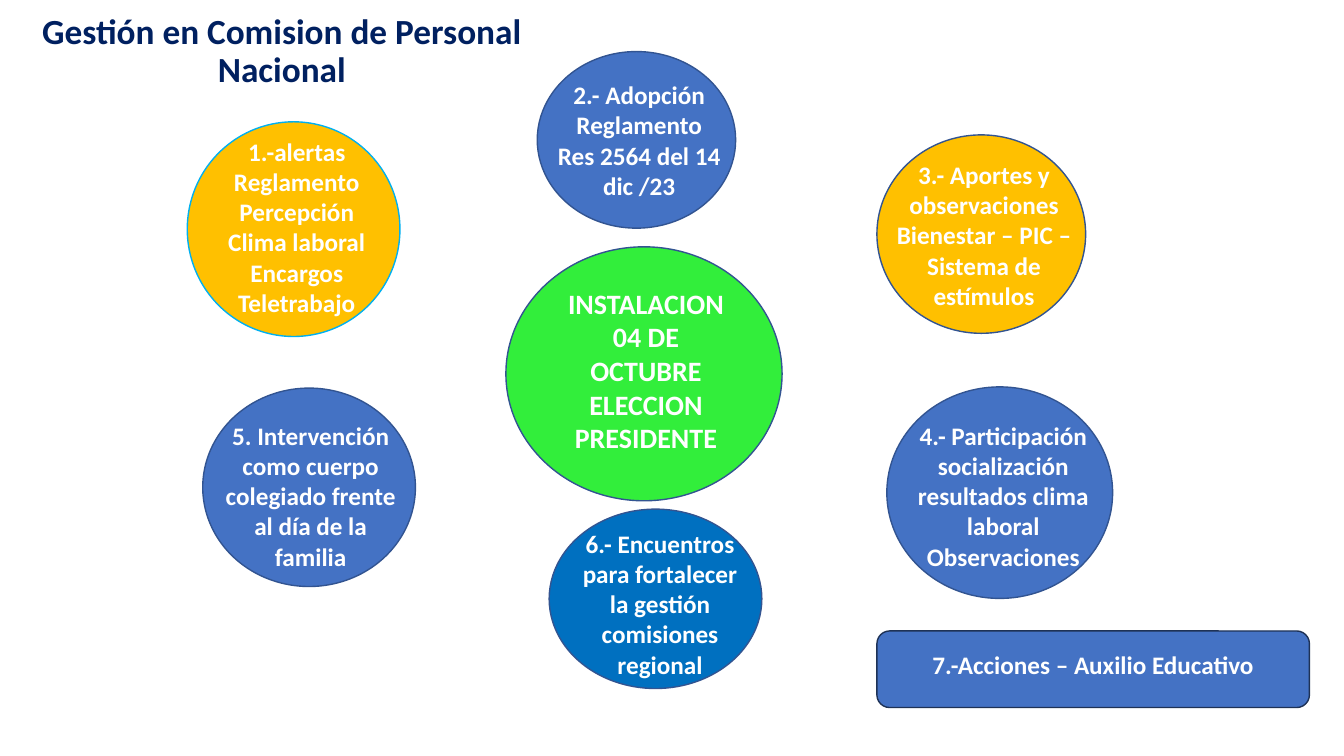
"""Build the slide on the work of the national personnel commission."""
from pptx import Presentation
from pptx.dml.color import RGBColor
from pptx.enum.shapes import MSO_SHAPE
from pptx.enum.text import MSO_ANCHOR, MSO_AUTO_SIZE, PP_ALIGN
from pptx.util import Cm, Pt

CIRCLE = MSO_SHAPE.FLOWCHART_CONNECTOR
ROUNDED = MSO_SHAPE.ROUNDED_RECTANGLE
CENTER = PP_ALIGN.CENTER
MIDDLE = MSO_ANCHOR.MIDDLE
NO_AUTOFIT = MSO_AUTO_SIZE.NONE
GROW = MSO_AUTO_SIZE.SHAPE_TO_FIT_TEXT

NAVY = RGBColor(0x00, 0x20, 0x60)
WHITE = RGBColor(0xFF, 0xFF, 0xFF)
AMBER = RGBColor(0xFF, 0xC0, 0x00)
BLUE = RGBColor(0x44, 0x72, 0xC4)
STRONG_BLUE = RGBColor(0x00, 0x70, 0xC0)
GREEN = RGBColor(0x32, 0xEE, 0x3B)
SKY = RGBColor(0x00, 0xB0, 0xF0)
OUTLINE = RGBColor(0x32, 0x54, 0x91)
DARK_OUTLINE = RGBColor(0x1E, 0x32, 0x56)


def write_centered(text_frame, lines, size, color):
    text_frame.word_wrap = True
    text_frame.text = "\n".join(lines)
    font_format = {"name": "Calibri", "size": Pt(size), "bold": True}
    for paragraph in text_frame.paragraphs:
        paragraph.alignment = CENTER
        for attribute, value in font_format.items():
            setattr(paragraph.font, attribute, value)
        paragraph.font.color.rgb = color


presentation = Presentation()
presentation.slide_width = Cm(33.87)
presentation.slide_height = Cm(19.05)
slide = presentation.slides.add_slide(presentation.slide_layouts[5])

title = slide.shapes.title
title_place = {"left": 0.69, "top": 0.38, "width": 12.83, "height": 1.85}
for attribute, value in title_place.items():
    setattr(title, attribute, Cm(value))
write_centered(title.text_frame, ["Gestión en Comision de Personal Nacional"], 25.2, NAVY)
title.text_frame.auto_size = NO_AUTOFIT
title.text_frame.vertical_anchor = MIDDLE
title.text_frame.paragraphs[0].line_spacing = 0.9

activities = [
    (CIRCLE, (4.72, 3.07, 5.36, 5.41), AMBER, SKY, (5.08, 3.3, 4.8, 4.88), 18,
     ["1.-alertas", "Reglamento", "Percepción", "Clima laboral", "Encargos", "Teletrabajo"]),
    (CIRCLE, (13.54, 1.3, 5, 4.45), BLUE, OUTLINE, (13.61, 1.88, 5, 3.33), 18,
     ["2.- Adopción Reglamento", "Res 2564 del 14 dic /23"]),
    (CIRCLE, (22.1, 3.4, 5.26, 5), AMBER, OUTLINE, (22.3, 3.89, 5, 4.11), 18,
     ["3.- Aportes y observaciones Bienestar – PIC –", "Sistema de estímulos"]),
    (CIRCLE, (5.11, 9.78, 5.36, 5), BLUE, OUTLINE, (5.33, 10.46, 5, 4.11), 18,
     ["5. Intervención como cuerpo colegiado frente al día de la familia"]),
    (CIRCLE, (22.35, 9.75, 5.69, 5.33), BLUE, OUTLINE, (22.73, 10.46, 5.11, 4.11), 18,
     ["4.- Participación socialización resultados clima laboral", "Observaciones"]),
    (CIRCLE, (13.84, 12.83, 5.36, 4.52), STRONG_BLUE, OUTLINE, (13.79, 13.18, 5.69, 4.19), 18,
     ["6.- Encuentros", "para fortalecer", "la gestión comisiones", "regional"]),
    (CIRCLE, (12.75, 6.22, 6.96, 6.4), GREEN, OUTLINE, (13.79, 7.09, 4.98, 4.52), 20,
     ["INSTALACION 04 DE OCTUBRE", "ELECCION PRESIDENTE"]),
    (ROUNDED, (22.1, 15.9, 10.9, 1.93), BLUE, DARK_OUTLINE, (21.67, 16.23, 11.76, 1.02), 18,
     ["7.-Acciones – Auxilio Educativo"]),
]

for kind, shape_place, fill, outline, text_place, size, lines in activities:
    shape = slide.shapes.add_shape(kind, *map(Cm, shape_place))
    shape.shadow.inherit = False
    shape.fill.solid()
    shape.fill.fore_color.rgb = fill
    shape.line.color.rgb = outline
    shape.line.width = Pt(1)
    label = slide.shapes.add_textbox(*map(Cm, text_place))
    write_centered(label.text_frame, lines, size, WHITE)
    label.text_frame.auto_size = GROW

presentation.save("out.pptx")
